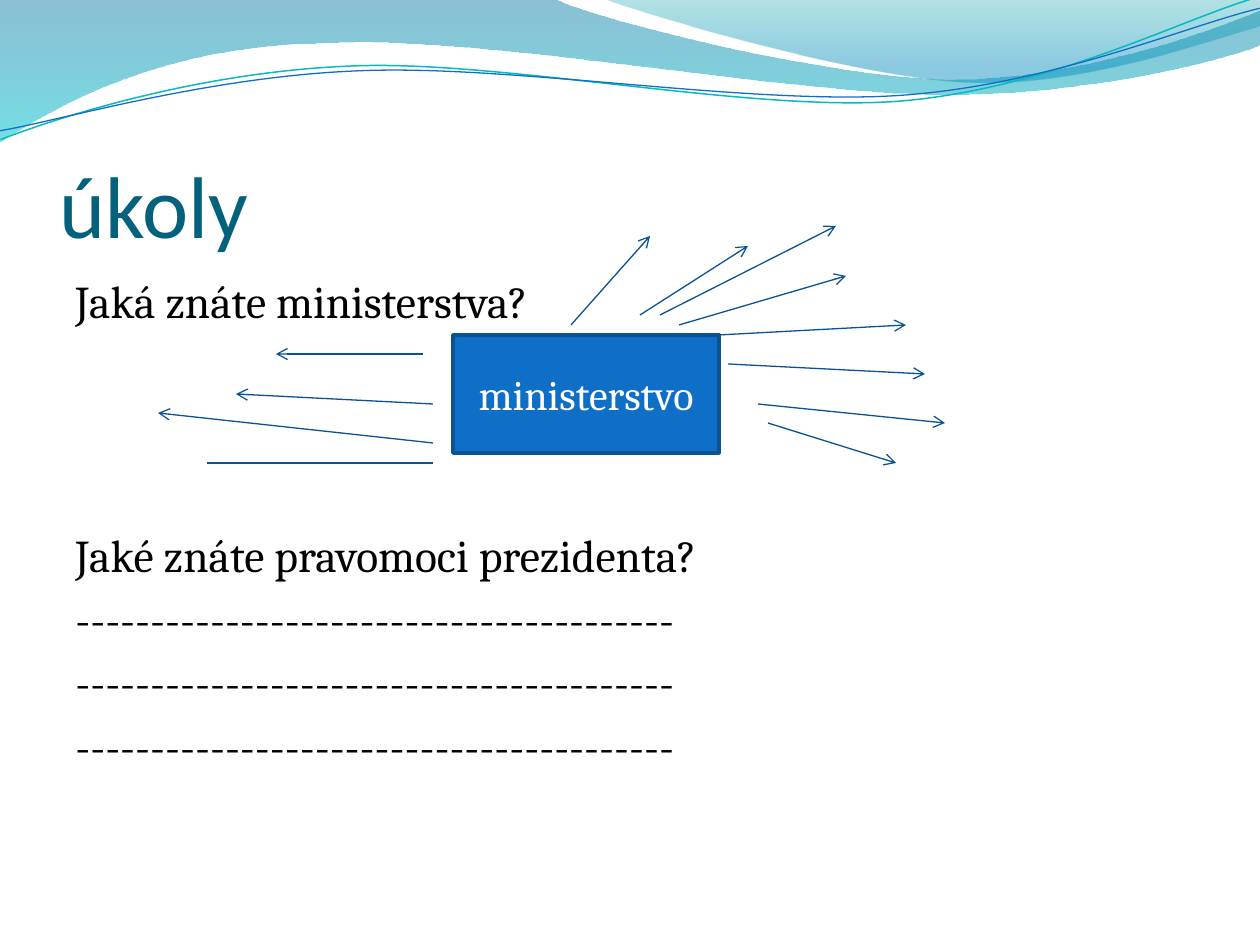
import pptx
import pptx.util
import pptx.dml.color
import pptx.enum.shapes
import pptx.enum.text
import pptx.oxml
import pptx.oxml.ns

SCALE = 914400 / 126
NS = pptx.oxml.ns.nsdecls("a")
ALIGN = pptx.enum.text.PP_ALIGN
ANCHOR = pptx.enum.text.MSO_ANCHOR

BANDS = [
    ((0, 0), [(554, -1), (600, 21, 837, 79, 955, 79),
              (1074, 79, 1207, 33, 1260, 11), (1261, 45),
              (1239, 55, 1096, 96, 940, 94), (784, 94, 481, 35, 324, 43),
              (163, 45, 58, 105, -1, 142)],
     [(0, "0074A1", 45), (100, "00C6CF", 55)]),
    ((604, -1), [(641, 14, 859, 78, 969, 82),
                 (1079, 87, 1211, 40, 1260, 26), (1260, 0)],
     [(0, "00A1A9", 30), (80, "008BBF", 45)]),
]
WAVES = [
    ((-2, 110), [(58, 90, 199, 52, 350, 53), (499, 53, 745, 118, 896, 114),
                 (1049, 109, 1184, 45, 1260, 27)], "0AB8BF", 0.85),
    ((-2, 101), [(57, 94, 207, 57, 357, 58), (509, 58, 750, 112, 902, 108),
                 (1052, 104, 1188, 52, 1262, 38)], "0F6FC6", 0.75),
]
RAYS = [
    (718, 335, 906, 325), (728, 364, 925, 374), (758, 404, 945, 423),
    (768, 423, 896, 463), (423, 354, 276, 354), (433, 404, 236, 394),
    (433, 443, 158, 413), (679, 325, 846, 276), (640, 315, 748, 246),
    (571, 325, 650, 236), (660, 315, 836, 226),
]
BAR = (433, 463, 207, 463)
DASHES = "-" * 40
TASKS = [("Jaká znáte ministerstva?", 5.2),
         ("Jaké znáte pravomoci prezidenta?", 114)] + [(DASHES, 5.2)] * 3


def px(num):
    """Turn px into EMU."""
    return pptx.util.Emu(round(num * SCALE))


def color(code):
    """Turn a hex string into a colour."""
    return pptx.dml.color.RGBColor.from_string(code)


def stroke(line, code, width):
    """Set the colour and width of a line."""
    line.color.rgb = color(code)
    line.width = pptx.util.Pt(width)


def bend(shape, node, step):
    """Turn a straight step of an outline into a cubic curve."""
    points = "".join(
        f'<a:pt x="{px(x) - shape.left}" y="{px(y) - shape.top}"/>'
        for x, y in zip(step[::2], step[1::2]))
    node.getparent().replace(node, pptx.oxml.parse_xml(
        f"<a:cubicBezTo {NS}>{points}</a:cubicBezTo>"))


def curve(slide, start, steps, close):
    """Draw an outline of straight and cubic steps."""
    path = slide.shapes.build_freeform(*map(px, start))
    path.add_line_segments([tuple(map(px, step[-2:])) for step in steps],
                           close=close)
    shape = path.convert_to_shape()
    shape.shadow.inherit = False
    nodes = list(shape.element.spPr.iter(pptx.oxml.ns.qn("a:lnTo")))
    for node, step in zip(nodes, steps):
        if len(step) == 6:
            bend(shape, node, step)
    return shape


def band(slide, start, steps, stops):
    """Draw a filled band with a clear gradient."""
    shape = curve(slide, start, steps, True)
    shape.line.fill.background()
    marks = "".join(
        f'<a:gs pos="{pos * 1000}"><a:srgbClr val="{code}">'
        f'<a:alpha val="{alpha * 1000}"/></a:srgbClr></a:gs>'
        for pos, code, alpha in stops)
    grad = pptx.oxml.parse_xml(
        f'<a:gradFill {NS} rotWithShape="1"><a:gsLst>{marks}</a:gsLst>'
        '<a:lin ang="5400000" scaled="0"/></a:gradFill>')
    shape.element.spPr.find(pptx.oxml.ns.qn("a:custGeom")).addnext(grad)


def wave(slide, start, steps, code, width):
    """Draw an open wavy line, tilted a little."""
    shape = curve(slide, start, steps, False)
    shape.rotation = 357.3
    shape.fill.background()
    stroke(shape.line, code, width)


def ray(slide, ends, head=True):
    """Draw a straight line, with an open arrowhead if asked."""
    link = slide.shapes.add_connector(
        pptx.enum.shapes.MSO_CONNECTOR.STRAIGHT, *map(px, ends))
    stroke(link.line, "095295", 0.75)
    if head:
        link.line._get_or_add_ln().append(
            pptx.oxml.parse_xml(f'<a:tailEnd {NS} type="arrow"/>'))
    link.element.spPr.append(pptx.oxml.parse_xml(f"<a:effectLst {NS}/>"))


def write(par, text, font, size, code):
    """Add a run to a paragraph."""
    run = par.add_run()
    run.text = text
    run.font.name = font
    run.font.size = pptx.util.Pt(size)
    run.font.color.rgb = color(code)


def title(slide):
    """Add the title."""
    frame = slide.shapes.add_textbox(*map(px, (60, 98, 1134, 158))).text_frame
    frame.word_wrap = True
    frame.vertical_anchor = ANCHOR.BOTTOM
    frame.margin_left = frame.margin_right = frame.margin_bottom = 0
    write(frame.paragraphs[0], "úkoly", "Calibri", 50, "04617B")


def body(slide):
    """Add the list of tasks."""
    frame = slide.shapes.add_textbox(*map(px, (63, 267, 1134, 605))).text_frame
    frame.word_wrap = True
    for i, (text, gap) in enumerate(TASKS):
        par = frame.add_paragraph() if i else frame.paragraphs[0]
        par.space_before = pptx.util.Pt(gap)
        props = par._p.get_or_add_pPr()
        props.set("marL", str(px(38)))
        props.set("indent", str(-px(38)))
        write(par, text, "Cambria", 26, "000000")


def box(slide):
    """Add the central box."""
    shape = slide.shapes.add_shape(pptx.enum.shapes.MSO_SHAPE.RECTANGLE,
                                   *map(px, (453, 335, 266, 118)))
    shape.shadow.inherit = False
    shape.fill.solid()
    shape.fill.fore_color.rgb = color("0F6FC6")
    stroke(shape.line, "0B5292", 2)
    frame = shape.text_frame
    frame.word_wrap = True
    frame.vertical_anchor = ANCHOR.MIDDLE
    par = frame.paragraphs[0]
    par.alignment = ALIGN.CENTER
    write(par, "ministerstvo", "Cambria", 24, "FFFFFF")


def main():
    """Build and save the slide."""
    deck = pptx.Presentation()
    deck.slide_width, deck.slide_height = px(1260), px(945)
    slide = deck.slides.add_slide(deck.slide_layouts[6])
    for item in BANDS:
        band(slide, *item)
    for item in WAVES:
        wave(slide, *item)
    title(slide)
    body(slide)
    box(slide)
    for ends in RAYS:
        ray(slide, ends)
    ray(slide, BAR, head=False)
    deck.save("out.pptx")


if __name__ == "__main__":
    main()
